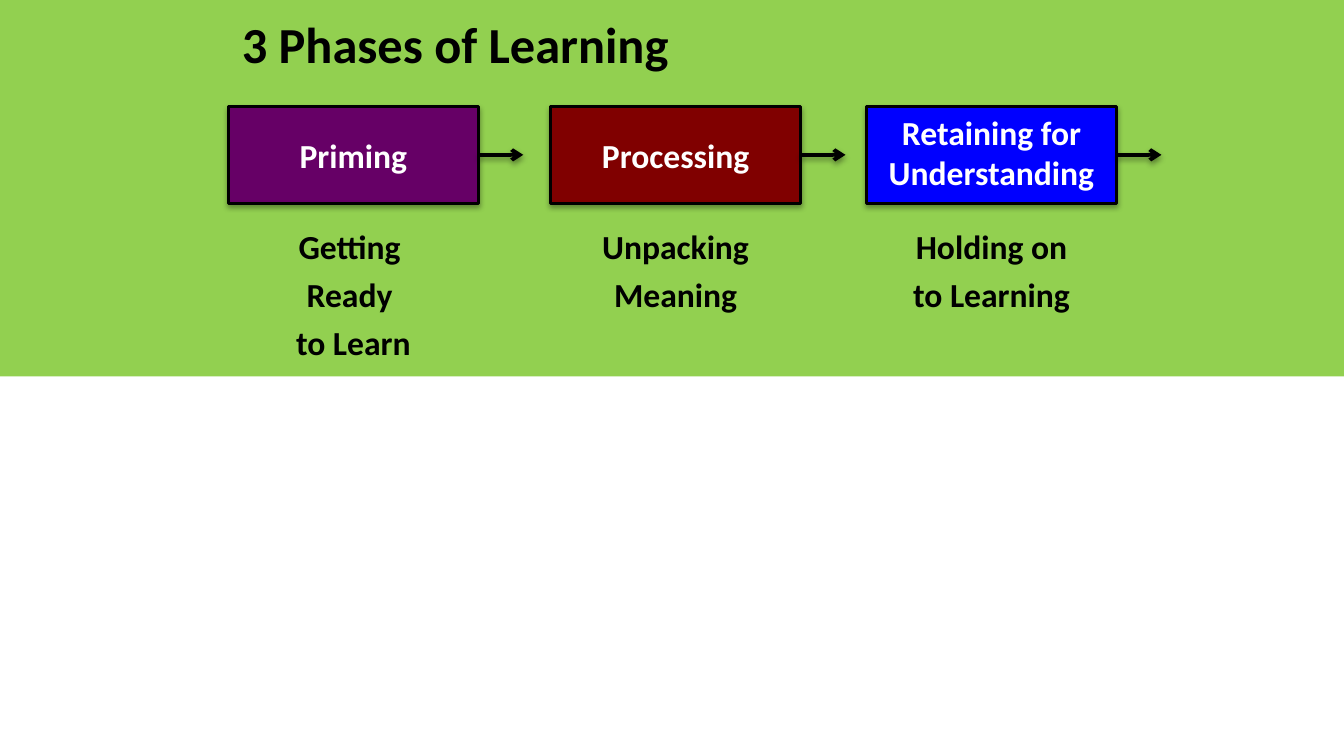
from lxml import etree
from pptx import Presentation
from pptx.dml.color import RGBColor
from pptx.enum.shapes import MSO_CONNECTOR, MSO_SHAPE
from pptx.enum.text import MSO_AUTO_SIZE, PP_ALIGN
from pptx.oxml.ns import qn
from pptx.util import Cm, Pt

RECT = MSO_SHAPE.RECTANGLE
LINE = MSO_CONNECTOR.STRAIGHT
GROW = MSO_AUTO_SIZE.SHAPE_TO_FIT_TEXT
LEFT, MID = PP_ALIGN.LEFT, PP_ALIGN.CENTER

HUES = {
    "band": "92D050",
    "ink": "000000",
    "white": "FFFFFF",
    "prime": "660066",
    "process": "800000",
    "retain": "0000FF",
}

# Box left, box hue, label top, label lines, caption width, caption lines
PHASES = [
    (4.32, "prime", 2.44, ["Priming"], 4.72, ["Getting ", "Ready ", "to Learn"]),
    (10.41, "process", 2.44, ["Processing"], 4.72, ["Unpacking", "Meaning"]),
    (16.38, "retain", 2.01, ["Retaining for", "Understanding"], 4.95,
     ["Holding on", "to Learning"]),
]
TOP, WIDE, HIGH = 2.01, 4.72, 1.83
LABEL_WIDE = 5.18
CAP_TOP = 4.01
REACH = 0.85


def hue(name):
    return RGBColor.from_string(HUES[name])


def add_text(slide, lines, box, size=18, color="ink", align=MID,
             space=None, inset=(0.18, 0.1), wrap=True):
    """Place bold text, one paragraph for each line."""
    frame = slide.shapes.add_textbox(*map(Cm, box)).text_frame
    frame.word_wrap = wrap
    frame.auto_size = GROW
    frame.margin_left = frame.margin_right = Cm(inset[0])
    frame.margin_top = frame.margin_bottom = Cm(inset[1])
    for i, line in enumerate(lines):
        para = frame.paragraphs[0] if i == 0 else frame.add_paragraph()
        para.alignment = align
        if space:
            para.line_spacing = space
        run = para.add_run()
        run.text = line
        font = run.font
        font.name, font.size, font.bold = "Calibri", Pt(size), True
        font.color.rgb = hue(color)


def add_shade(shape, dist, alpha):
    """Give a shape a soft shadow straight below it."""
    props = shape._element.spPr
    list_ = etree.SubElement(props, qn("a:effectLst"))
    shade = etree.SubElement(list_, qn("a:outerShdw"), blurRad=str(Pt(3.1)),
                             dist=str(Pt(dist)), dir="5400000", rotWithShape="0")
    tint = etree.SubElement(shade, qn("a:srgbClr"), val=HUES["ink"])
    etree.SubElement(tint, qn("a:alpha"), val=str(alpha * 1000))


def add_rect(slide, box, color):
    shape = slide.shapes.add_shape(RECT, *map(Cm, box))
    shape.fill.solid()
    shape.fill.fore_color.rgb = hue(color)
    return shape


def add_arrow(slide, left, mid, reach):
    arrow = slide.shapes.add_connector(
        LINE, Cm(left), Cm(mid), Cm(left + reach), Cm(mid))
    arrow.line.color.rgb = hue("ink")
    arrow.line.width = Pt(2)
    etree.SubElement(arrow.line._get_or_add_ln(), qn("a:tailEnd"), type="arrow")
    add_shade(arrow, 1.6, 38)


def add_head(slide, box):
    """Green band with the title."""
    left, top, wide, high = box
    band = add_rect(slide, box, "band")
    band.line.fill.background()
    band.shadow.inherit = False
    add_text(slide, ["3 Phases of Learning"], (left + 4.32, top + 0.15, 8.66, 1.42),
             size=27, align=LEFT, inset=(0.25, 0.13), wrap=False)


def add_phase(slide, box, color, label_top, label, cap_wide, caption):
    """Coloured box with its arrow, label and caption."""
    left, top, wide, high = box
    mid = left + wide / 2

    # Box and arrow
    shape = add_rect(slide, box, color)
    shape.line.color.rgb = hue("ink")
    shape.line.width = Pt(1.5)
    add_shade(shape, 1.8, 35)
    add_arrow(slide, left + wide, top + high / 2, REACH)

    # Label on the box
    add_text(slide, label, (mid - LABEL_WIDE / 2, label_top, LABEL_WIDE,
                            0.2 + 0.77 * len(label)), color="white")

    # Caption below the box
    add_text(slide, caption, (mid - cap_wide / 2, CAP_TOP, cap_wide,
                              0.2 + 0.89 * len(caption)), space=1.2)


def main():
    deck = Presentation()
    deck.slide_width, deck.slide_height = Cm(25.4), Cm(14.28)
    slide = deck.slides.add_slide(deck.slide_layouts[6])
    add_head(slide, (0, -0.03, 25.4, 7.14))
    for left, *rest in PHASES:
        add_phase(slide, (left, TOP, WIDE, HIGH), *rest)
    deck.save("out.pptx")


if __name__ == "__main__":
    main()
